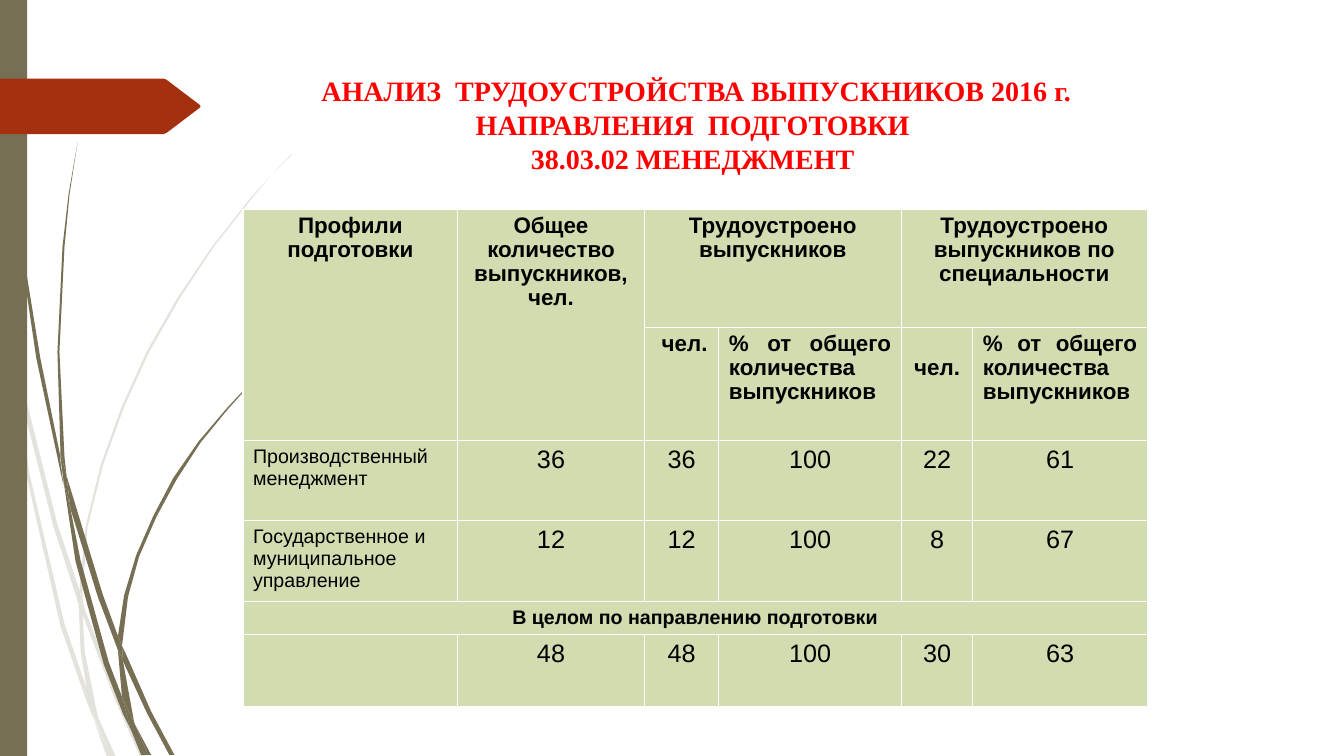
from lxml import etree
from pptx import Presentation
from pptx.dml.color import RGBColor
from pptx.enum import shapes, text
from pptx.oxml import ns
from pptx.util import Inches, Pt

COLORS = {"olive": "766F54", "rust": "A53010", "red": "FF0000",
          "black": "000000", "sage": "D1DDB0", "white": "FFFFFF"}

PALE_STEMS = [
    [(0.1, 3.5), (0.08, 3.22), (0, 2.82), (0, 2.99), (0.09, 3.44)],
    [(0.53, 5.22), (0.78, 5.99), (0.79, 5.86), (0.57, 5.2), (0.13, 3.45), (0.16, 3.76)],
    [(0.85, 6.07), (0.82, 5.96), (0.82, 6.1), (1.14, 6.94), (1.39, 7.51), (1.44, 7.51),
     (1.18, 6.92)],
    [(1.1, 7.51), (1.15, 7.51), (0.97, 7.11)],
    [(0.86, 6.83), (0.64, 6.19), (0.29, 4.69), (0.16, 3.76), (0.1, 3.5), (0.26, 4.7),
     (0.6, 6.21), (0.85, 6.93), (0.93, 7.14), (0.92, 7.07)],
    [(0.78, 5.99), (0.8, 6.46), (0.86, 6.83), (0.89, 6.92), (0.97, 7.11), (0.96, 7.06),
     (0.84, 6.46), (0.82, 6.1), (0.81, 6.08)],
    [(0.82, 5.84), (0.87, 5.22), (1.02, 4.62), (1.23, 4.04), (1.48, 3.49), (1.79, 2.95),
     (2.12, 2.45), (2.49, 1.98), (2.68, 1.75), (2.89, 1.54), (2.89, 1.53), (2.68, 1.75),
     (2.48, 1.97), (2.11, 2.44), (1.77, 2.94), (1.46, 3.48), (1.21, 4.03), (1, 4.61),
     (0.85, 5.22), (0.79, 5.84), (0.79, 5.86), (0.82, 5.96)],
    [(0.93, 7.14), (1.06, 7.51), (1.1, 7.51)],
    [(0.81, 6.08), (0.82, 6.1), (0.82, 5.96), (0.78, 5.86), (0.78, 5.99)],
    [(0.89, 6.92), (0.86, 6.83), (0.92, 7.07), (0.94, 7.14), (1.1, 7.51), (0.97, 7.11)],
]
DARK_STEMS = [
    [(0.07, 1.1), (0.18, 2.33), (0.36, 3.55), (0.62, 4.77), (0.63, 4.81), (0.6, 4.57),
     (0.6, 4.53), (0.4, 3.55), (0.2, 2.32), (0.08, 1.09), (0.05, 0.48), (0.04, 0),
     (0.03, 0), (0.04, 0.48)],
    [(0.97, 5.92), (1.17, 6.45), (1.17, 6.33), (1.17, 6.31), (1.02, 5.9), (0.66, 4.72),
     (0.7, 5.05)],
    [(1.25, 6.49), (1.21, 6.41), (1.22, 6.56), (1.46, 7.08), (1.68, 7.49), (1.73, 7.49),
     (1.5, 7.06)],
    [(1.21, 6.91), (1.08, 6.57), (0.8, 5.56), (0.7, 5.05), (0.63, 4.77), (0.75, 5.57),
     (1.03, 6.59), (1.22, 7.08), (1.29, 7.22), (1.28, 7.17)],
    [(0.66, 4.72), (0.64, 4.53), (0.59, 3.49), (0.64, 2.45), (0.69, 1.93), (0.77, 1.41),
     (0.68, 1.93), (0.62, 2.45), (0.57, 3.49), (0.6, 4.49)],
    [(1.47, 7.49), (1.5, 7.49), (1.34, 7.19)],
    [(0.63, 4.77), (0.7, 5.05), (0.66, 4.72), (0.6, 4.49), (0.6, 4.53)],
    [(1.22, 6.33), (1.27, 5.92), (1.38, 5.52), (1.55, 5.13), (1.75, 4.76), (1.99, 4.39),
     (2.26, 4.06), (2.55, 3.74), (2.71, 3.59), (2.88, 3.44), (2.87, 3.44), (2.7, 3.58),
     (2.55, 3.73), (2.25, 4.05), (1.97, 4.38), (1.72, 4.74), (1.52, 5.12), (1.35, 5.51),
     (1.23, 5.91), (1.17, 6.31), (1.21, 6.41)],
    [(1.29, 7.22), (1.4, 7.49), (1.44, 7.49)],
    [(1.17, 6.45), (1.21, 6.91), (1.28, 7.06), (1.34, 7.19), (1.33, 7.16), (1.22, 6.56),
     (1.2, 6.51)],
    [(1.17, 6.45), (1.2, 6.51), (1.22, 6.56), (1.21, 6.41), (1.17, 6.31), (1.17, 6.33)],
    [(1.28, 7.06), (1.21, 6.91), (1.28, 7.17), (1.29, 7.22), (1.44, 7.49), (1.47, 7.49),
     (1.34, 7.19)],
]
ARROW = [(1.98, 1.07), (1.65, 1.32), (1.62, 1.33), (0, 1.33), (0, 0.78), (1.62, 0.78),
         (1.65, 0.79), (1.98, 1.04), (1.99, 1.06)]

TITLE = ("АНАЛИЗ  ТРУДОУСТРОЙСТВА ВЫПУСКНИКОВ 2016 г.\v"
         "НАПРАВЛЕНИЯ  ПОДГОТОВКИ \v38.03.02 МЕНЕДЖМЕНТ ")
COLUMN_WIDTHS = [2.13, 1.85, 0.74, 1.81, 0.71, 1.73]
ROW_HEIGHTS = [1.17, 1.09, 0.79, 0.8, 0.33, 0.71]
PEOPLE = " чел."
SHARE = "% от общего количества выпускников"
ROWS = [
    ["Профили подготовки", "Общее количество выпускников, чел.",
     "Трудоустроено выпускников", "", "Трудоустроено выпускников по специальности", ""],
    ["", "", PEOPLE, SHARE, PEOPLE, SHARE],
    ["Производственный менеджмент", "36", "36", "100", "22", "61"],
    ["Государственное и муниципальное управление", "12", "12", "100", "8", "67"],
    ["В целом по направлению подготовки", "", "", "", "", ""],
    ["", "48", "48", "100", "30", "63"],
]
MERGES = [((0, 0), (1, 0)), ((0, 1), (1, 1)), ((0, 2), (0, 3)),
          ((0, 4), (0, 5)), ((4, 0), (4, 5))]


def color(name):
    return RGBColor.from_string(COLORS[name])


def paint(shape, fill, opacity=100):
    shape.shadow.inherit = False
    shape.fill.solid()
    shape.fill.fore_color.rgb = color(fill)
    shape.line.fill.background()
    if opacity < 100:
        tint = shape.fill._xPr.find(".//" + ns.qn("a:srgbClr"))
        etree.SubElement(tint, ns.qn("a:alpha"), val=str(opacity * 1000))


def add_outline(page, points, fill, opacity=100):
    corners = [(Inches(x), Inches(y)) for x, y in points]
    builder = page.shapes.build_freeform(*corners[0])
    builder.add_line_segments(corners[1:], close=True)
    paint(builder.convert_to_shape(), fill, opacity)


def write(frame, words, size, font="Arial", ink="black", bold=False,
          align=text.PP_ALIGN.CENTER, spacing=None):
    para = frame.paragraphs[0]
    para.text = words
    para.alignment = align
    para.line_spacing = spacing
    for span in para.runs:
        span.font.size = Pt(size)
        span.font.name = font
        span.font.bold = bold
        span.font.color.rgb = color(ink)


def add_title(page):
    box = page.shapes.add_textbox(Inches(2.81), Inches(0.68), Inches(8.19), Inches(1.4))
    box.text_frame.word_wrap = True
    write(box.text_frame, TITLE, 20, font="Times New Roman", ink="red", bold=True,
          spacing=Pt(24.3))


def add_borders(cell):
    properties = cell._tc.get_or_add_tcPr()
    for position, side in enumerate(("a:lnL", "a:lnR", "a:lnT", "a:lnB")):
        line = etree.Element(ns.qn(side), w=str(Pt(1)))
        fill = etree.SubElement(line, ns.qn("a:solidFill"))
        etree.SubElement(fill, ns.qn("a:srgbClr"), val=COLORS["white"])
        properties.insert(position, line)


def cell_format(row, column, words):
    if row < 2:
        align = text.PP_ALIGN.JUSTIFY if words == SHARE else text.PP_ALIGN.CENTER
        return dict(size=16, bold=True, align=align, spacing=0.96)
    if row == 4:
        return dict(size=14, bold=True)
    if column == 0:
        return dict(size=14, align=text.PP_ALIGN.LEFT)
    return dict(size=18)


def add_employment_table(page):
    table = page.shapes.add_table(
        len(ROWS), len(COLUMN_WIDTHS), Inches(2.41), Inches(2.08),
        Inches(sum(COLUMN_WIDTHS)), Inches(sum(ROW_HEIGHTS))).table
    table.first_row = table.horz_banding = False
    for column, width in zip(table.columns, COLUMN_WIDTHS):
        column.width = Inches(width)
    for row, height in zip(table.rows, ROW_HEIGHTS):
        row.height = Inches(height)
    for start, end in MERGES:
        table.cell(*start).merge(table.cell(*end))
    for r, row in enumerate(ROWS):
        for c, words in enumerate(row):
            cell = table.cell(r, c)
            cell.fill.solid()
            cell.fill.fore_color.rgb = color("sage")
            add_borders(cell)
            if words:
                write(cell.text_frame, words, **cell_format(r, c, words))


def main():
    deck = Presentation()
    deck.slide_width, deck.slide_height = Inches(13.33), Inches(7.5)
    page = deck.slides.add_slide(deck.slide_layouts[6])
    for stem in PALE_STEMS:
        add_outline(page, stem, "olive", opacity=20)
    for stem in DARK_STEMS:
        add_outline(page, stem, "olive")
    side_bar = page.shapes.add_shape(shapes.MSO_SHAPE.RECTANGLE, 0, 0,
                                     Inches(0.27), Inches(7.5))
    paint(side_bar, "olive")
    add_outline(page, ARROW, "rust")
    add_title(page)
    add_employment_table(page)
    deck.save("out.pptx")


if __name__ == "__main__":
    main()
